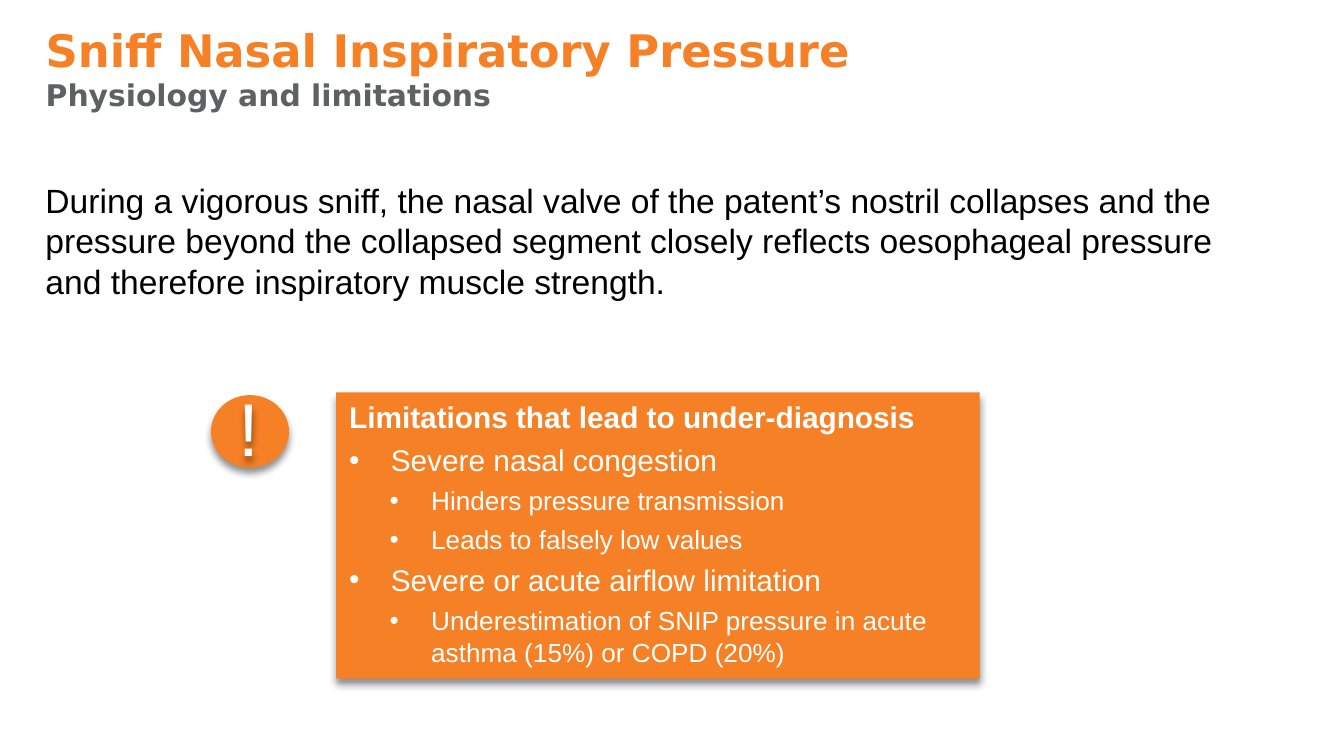
from lxml import etree
from pptx import Presentation
from pptx.dml.color import RGBColor
from pptx.enum.shapes import MSO_SHAPE
from pptx.enum.text import MSO_ANCHOR, MSO_AUTO_SIZE, PP_ALIGN
from pptx.oxml.ns import qn
from pptx.util import Inches, Pt

RECTANGLE, OVAL = MSO_SHAPE.RECTANGLE, MSO_SHAPE.OVAL
TOP = MSO_ANCHOR.TOP
LEFT = PP_ALIGN.LEFT
FIXED, GROW = MSO_AUTO_SIZE.NONE, MSO_AUTO_SIZE.SHAPE_TO_FIT_TEXT

ORANGE, GRAY, WHITE, BLACK = "F58025", "5F6062", "FFFFFF", "000000"
TITLE_FONT, BODY_FONT = "DejaVu Sans", "Arial"


def color(hex_value):
    return RGBColor.from_string(hex_value)


class SlideBuilder:
    """Holds the style and the current slide."""

    def __init__(self, slide):
        self.slide = slide

    def place(self, shape, left, top, width, height):
        shape.left, shape.top = Inches(left), Inches(top)
        shape.width, shape.height = Inches(width), Inches(height)

    def frame(self, shape, auto_size=FIXED, wrap=True):
        text_frame = shape.text_frame
        text_frame.word_wrap = wrap
        text_frame.auto_size = auto_size
        text_frame.vertical_anchor = TOP
        return text_frame

    def run(self, paragraph, text, size, hex_value, bold=False, font=BODY_FONT):
        run = paragraph.add_run()
        run.text = text
        run.font.name, run.font.size, run.font.bold = font, Pt(size), bold
        run.font.color.rgb = color(hex_value)

    def shadow(self, shape):
        shape.shadow.inherit = False
        effects = shape._element.spPr.find(qn("a:effectLst"))
        outer = etree.SubElement(
            effects, qn("a:outerShdw"), blurRad=str(Pt(4)), dist=str(Pt(3)),
            dir="5400000", algn="ctr", rotWithShape="0")
        shade = etree.SubElement(outer, qn("a:srgbClr"), val=BLACK)
        etree.SubElement(shade, qn("a:alpha"), val="43000")

    def title(self, heading, subtitle, *box):
        title = self.slide.shapes.title
        self.place(title, *box)
        paragraph = self.frame(title).paragraphs[0]
        paragraph.alignment = LEFT
        self.run(paragraph, heading, 24, ORANGE, True, TITLE_FONT)
        paragraph.add_line_break()
        self.run(paragraph, subtitle, 16, GRAY, True, TITLE_FONT)

    def text(self, text, size, hex_value, *box, shapes=None, wrap=True):
        shapes = self.slide.shapes if shapes is None else shapes
        text_box = shapes.add_textbox(*map(Inches, box))
        paragraph = self.frame(text_box, wrap=wrap).paragraphs[0]
        self.run(paragraph, text, size, hex_value)
        return text_box

    def filled(self, kind, *box, shapes=None):
        shapes = self.slide.shapes if shapes is None else shapes
        shape = shapes.add_shape(kind, *map(Inches, box))
        shape.fill.solid()
        shape.fill.fore_color.rgb = color(ORANGE)
        shape.line.fill.background()
        self.shadow(shape)
        return shape

    def bullet(self, paragraph, indent):
        properties = paragraph._p.get_or_add_pPr()
        properties.set("marL", str(Inches(indent)))
        properties.set("indent", str(Inches(-0.31)))
        etree.SubElement(properties, qn("a:buFont"), typeface=BODY_FONT)
        etree.SubElement(properties, qn("a:buChar"), char="•")

    def panel(self, heading, items, *box):
        text_frame = self.frame(self.filled(RECTANGLE, *box), GROW)
        for level, text in [(0, heading)] + items:
            first = level == 0
            paragraph = text_frame.paragraphs[0] if first else text_frame.add_paragraph()
            paragraph.alignment = LEFT
            paragraph.level = level
            paragraph.space_before = Pt(3.8)
            if not first:
                self.bullet(paragraph, 0.31 if level == 1 else 0.61)
            self.run(paragraph, text, 14 if level == 2 else 16, WHITE, bold=first)

    def warning_badge(self):
        shapes = self.slide.shapes.add_group_shape().shapes
        self.filled(OVAL, 1.57, 2.94, 0.58, 0.54, shapes=shapes)
        mark = self.text("!", 40, WHITE, 1.68, 2.79, 0.37, 0.77,
                         shapes=shapes, wrap=False)
        self.shadow(mark)


def main():
    presentation = Presentation()
    # Widescreen, 16:9
    presentation.slide_width = Inches(10)
    presentation.slide_height = Inches(10) * 9 // 16
    builder = SlideBuilder(presentation.slides.add_slide(presentation.slide_layouts[5]))

    # Title and explanation
    builder.title("Sniff Nasal Inspiratory Pressure", "Physiology and limitations",
                  0.24, 0.12, 9, 0.84)
    builder.text(
        "During a vigorous sniff, the nasal valve of the patent’s nostril collapses "
        "and the pressure beyond the collapsed segment closely reflects oesophageal "
        "pressure and therefore inspiratory muscle strength.",
        18, BLACK, 0.24, 1.29, 9.2, 1.1)

    # Limitations panel with its warning badge
    limitations = [
        (1, "Severe nasal congestion"),
        (2, "Hinders pressure transmission"),
        (2, "Leads to falsely low values"),
        (1, "Severe or acute airflow limitation"),
        (2, "Underestimation of SNIP pressure in acute asthma (15%) or COPD (20%)"),
    ]
    builder.panel("Limitations that lead to under-diagnosis", limitations,
                  2.5, 2.92, 4.79, 2.13)
    builder.warning_badge()

    presentation.save("out.pptx")


if __name__ == "__main__":
    main()
